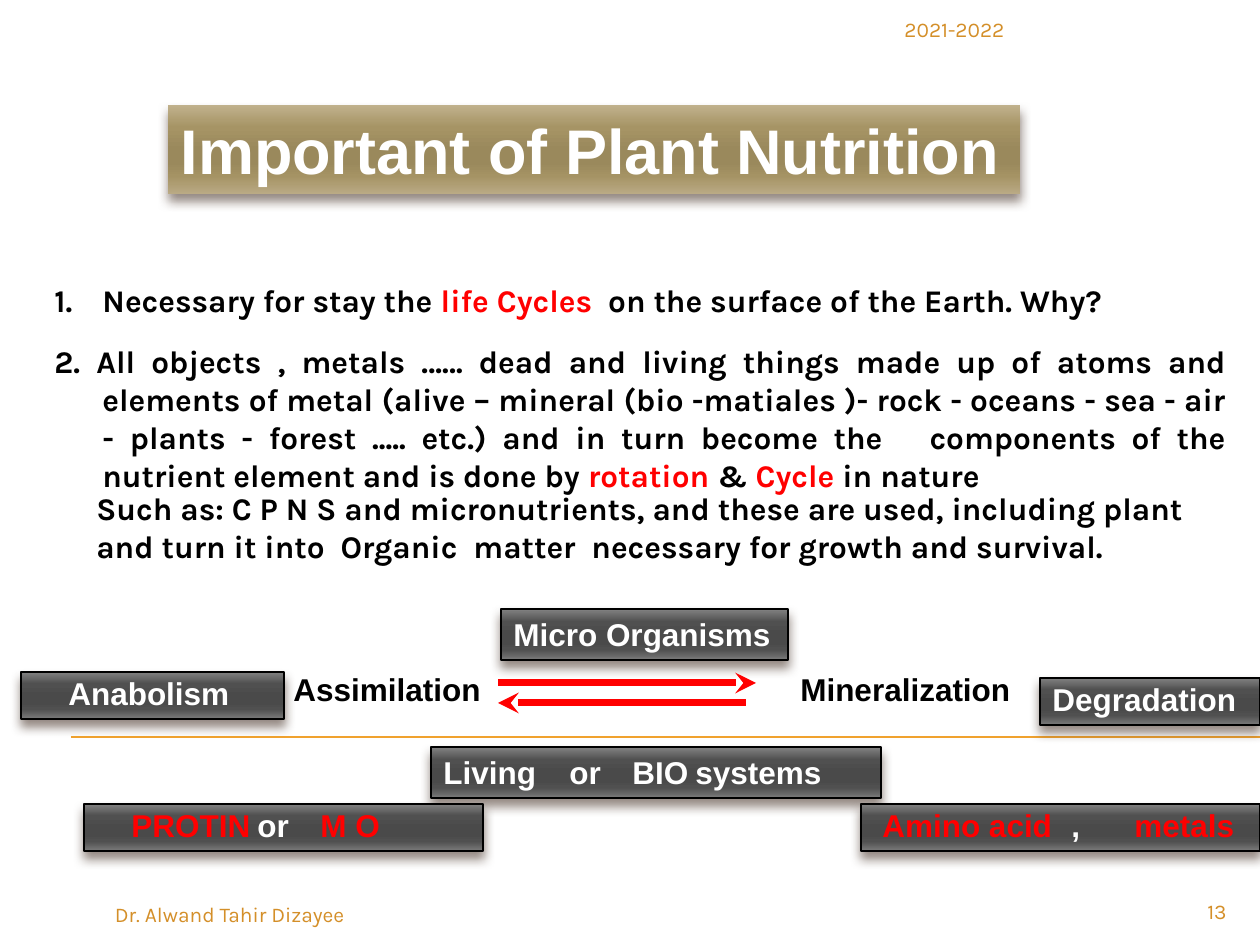
import pptx
import pptx.dml.color
import pptx.enum.shapes
import pptx.enum.text
import pptx.oxml
import pptx.oxml.ns
import pptx.util

PX = 914400 / 126
BLACK, WHITE, RED = "000000", "FFFFFF", "FF0000"
AMBER, ORANGE = "D48F29", "F0A22E"
GOLD_STOPS = ((0, "C0B18C"), (25, "A69465"), (50, "9A895C"),
              (65, "9A895C"), (80, "A59364"), (100, "BAAA85"))
GREY_STOPS = ((0, "828282"), (25, "505050"), (50, "4A4A4A"),
              (65, "4A4A4A"), (80, "505050"), (100, "7A7A7A"))
ALIGN = pptx.enum.text.PP_ALIGN


def px(length):
    return pptx.util.Emu(round(length * PX))


def color(hex_code):
    return pptx.dml.color.RGBColor.from_string(hex_code)


def add_xml(parent, tag, body="", **attributes):
    listed = "".join(f' {name}="{value}"' for name, value in attributes.items())
    namespace = pptx.oxml.ns.nsdecls("a")
    element = pptx.oxml.parse_xml(f"<a:{tag} {namespace}{listed}>{body}</a:{tag}>")
    parent.append(element)
    return element


class SlideBuilder:
    """Holds the current slide and draws its elements in one style."""

    def __init__(self, slide):
        self.slide = slide

    def fill_text(self, shape, spans, font="Arial", size=18, bold=True, ink=BLACK,
                  align=ALIGN.LEFT, indent=0, hanging=0, tabs=(), spacing=None,
                  numbered=False):
        """Fill the shape with one paragraph; spans are strings or (text, colour)."""
        frame = shape.text_frame
        frame.word_wrap = True
        frame.auto_size = pptx.enum.text.MSO_AUTO_SIZE.NONE
        frame.vertical_anchor = pptx.enum.text.MSO_ANCHOR.TOP
        para = frame.paragraphs[0]
        para.alignment = align
        para.line_spacing = spacing
        para.font.name, para.font.size = font, pptx.util.Pt(size)
        para.font.bold = bold
        para.font.color.rgb = color(ink)
        for span in spans:
            text, hue = (span, ink) if isinstance(span, str) else span
            run = para.add_run()
            run.text = text
            run.font.color.rgb = color(hue)

        settings = para.font._element.getparent()
        settings.set("marL", str(px(indent)))
        settings.set("indent", str(px(-hanging)))
        # Numbering and tab stops come before the default run properties.
        extras = []
        if numbered:
            extras.append(add_xml(settings, "buAutoNum", type="arabicPeriod"))
        if tabs:
            stops = "".join(f'<a:tab pos="{px(stop)}" algn="l"/>' for stop in tabs)
            extras.append(add_xml(settings, "tabLst", stops))
        for element in extras:
            para.font._element.addprevious(element)

    def decorate(self, shape, stops, outline=None):
        """Give the shape a vertical gradient, an outline and a soft shadow."""
        shape.fill.gradient()
        shape.fill.gradient_angle = 270
        properties = shape._element.spPr
        stop_list = properties.find(".//" + pptx.oxml.ns.qn("a:gsLst"))
        for stop in list(stop_list):
            stop_list.remove(stop)
        for position, hue in stops:
            add_xml(stop_list, "gs", f'<a:srgbClr val="{hue}"/>', pos=position * 1000)
        if outline:
            shape.line.color.rgb = color(outline)
            shape.line.width = pptx.util.Pt(0.79)
        else:
            shape.line.fill.background()
        shape.shadow.inherit = False
        effects = properties.find(pptx.oxml.ns.qn("a:effectLst"))
        add_xml(effects, "outerShdw",
                '<a:srgbClr val="4E3B30"><a:alpha val="60000"/></a:srgbClr>',
                blurRad=pptx.util.Pt(6), dist=pptx.util.Pt(4), dir=90 * 60000,
                rotWithShape=0)

    def title(self, area, text):
        shape = self.slide.shapes.title
        shape.left, shape.top, shape.width, shape.height = map(px, area)
        self.decorate(shape, GOLD_STOPS)
        self.fill_text(shape, [text], size=36, ink=WHITE)

    def text(self, area, *spans, **style):
        box = self.slide.shapes.add_textbox(*map(px, area))
        self.fill_text(box, spans, **style)

    def label(self, area, *spans, **style):
        kind = pptx.enum.shapes.MSO_SHAPE.RECTANGLE
        shape = self.slide.shapes.add_shape(kind, *map(px, area))
        self.decorate(shape, GREY_STOPS, BLACK)
        self.fill_text(shape, spans, ink=WHITE, **style)

    def line(self, start, end, y, hue, width, arrow=False):
        kind = pptx.enum.shapes.MSO_CONNECTOR.STRAIGHT
        line = self.slide.shapes.add_connector(kind, px(start), px(y), px(end), px(y))
        line.line.color.rgb = color(hue)
        line.line.width = pptx.util.Pt(width)
        properties = line._element.spPr
        if arrow:
            add_xml(properties.find(pptx.oxml.ns.qn("a:ln")), "tailEnd", type="stealth")
        add_xml(properties, "effectLst")


def main():
    deck = pptx.Presentation()
    deck.slide_width, deck.slide_height = px(1260), px(945)
    page = SlideBuilder(deck.slides.add_slide(deck.slide_layouts[5]))

    page.line(71, 1260, 737, ORANGE, 0.75)
    page.title((168, 105, 852, 89), "Important of Plant Nutrition")

    body = {"font": "Karla"}
    page.text((42, 275, 1218, 50), "Necessary for stay the ", ("life Cycles  ", RED),
              "on the surface of the Earth. Why?",
              indent=48, hanging=48, numbered=True, **body)
    page.text((42, 336, 1197, 223),
              "2. All objects , metals …… dead and living things made up of atoms and "
              "elements of metal (alive – mineral (bio -matiales )- rock - oceans - sea "
              "- air - plants - forest ..... etc.) and in turn become the   components "
              "of the nutrient element and is done by ",
              ("rotation", RED), " & ", ("Cycle ", RED), "in nature",
              indent=48, hanging=48, align=ALIGN.JUSTIFY, **body)
    page.text((84, 483, 1171, 88),
              "Such as: C P N S and micronutrients, and these are used, including plant "
              "and turn it into  Organic  matter  necessary for growth and survival.",
              **body)

    tight = {"spacing": 0.9}
    page.text((281, 664, 213, 50), "Assimilation")
    page.label((21, 672, 263, 47), "Anabolism", indent=35, **tight)
    page.label((501, 609, 287, 51), "Micro Organisms")
    page.text((788, 668, 242, 47), "Mineralization", **tight)
    page.label((1040, 678, 220, 47), "Degradation", **tight)
    page.line(498, 756, 683, RED, 4, arrow=True)
    page.line(746, 498, 703, RED, 4, arrow=True)
    page.label((431, 747, 450, 51), "Living\tor\tBIO\tsystems", tabs=(119, 167, 241))
    page.label((84, 804, 399, 47), ("PROTIN\t", RED), "or\t", ("M O", RED),
               indent=35, tabs=(181, 256), **tight)
    page.label((861, 804, 399, 47), ("Amino acid\t", RED), ",\t", ("metals", RED),
               indent=9, tabs=(197, 249), **tight)

    margin = {"font": "Karla", "size": 12, "bold": False, "ink": AMBER}
    page.text((-105, 895, 462, 40), "Dr. Alwand Tahir Dizayee",
              align=ALIGN.RIGHT, **margin)
    page.text((1134, 892, 105, 34), "13", align=ALIGN.RIGHT, **margin)
    page.text((892, 10, 347, 40), "2021-2022", **margin)

    deck.save("out.pptx")


if __name__ == "__main__":
    main()
